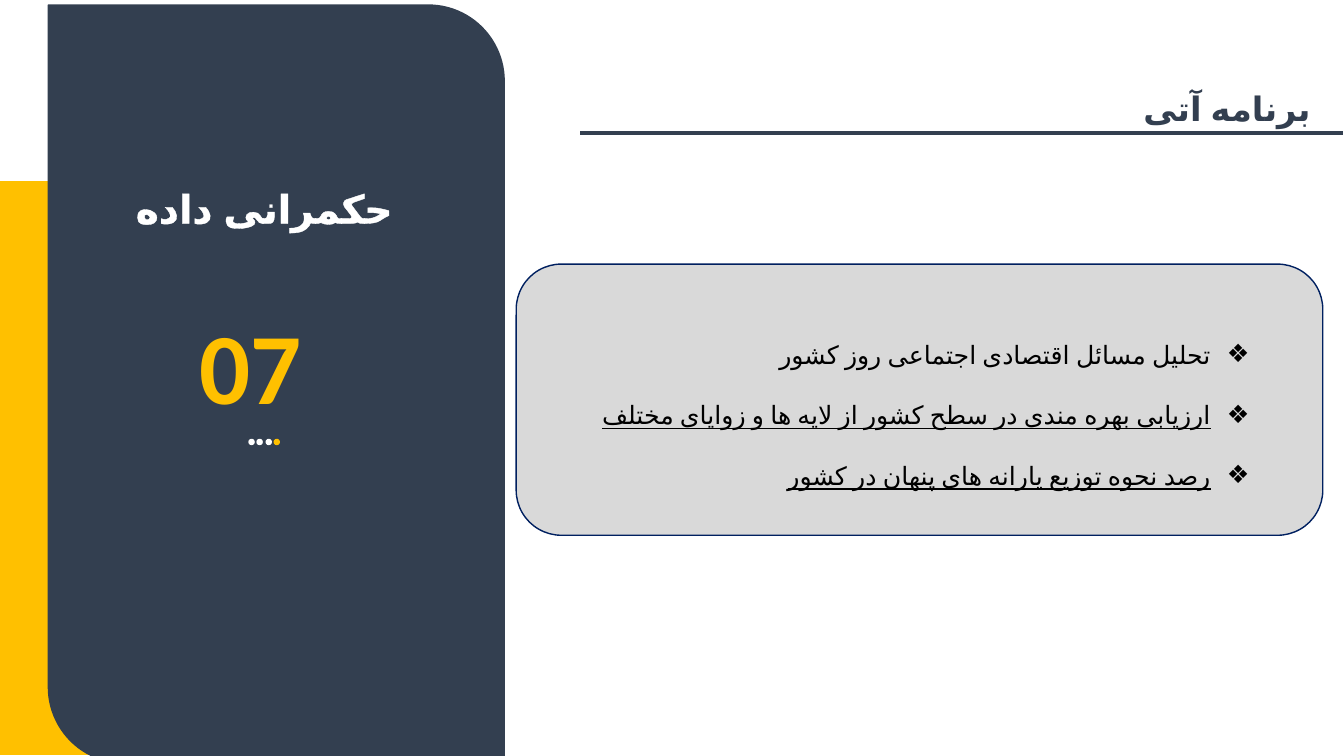
from dataclasses import dataclass

import pptx
import pptx.dml.color
import pptx.enum.shapes
import pptx.enum.text
import pptx.oxml
import pptx.oxml.ns
import pptx.shapes.autoshape
import pptx.shapes.base
import pptx.text.text
import pptx.util

EMU_PER_PX = 9144  # 100 px to the inch
Shape = pptx.enum.shapes.MSO_SHAPE
Align = pptx.enum.text.PP_ALIGN
Anchor = pptx.enum.text.MSO_ANCHOR
AutoSize = pptx.enum.text.MSO_AUTO_SIZE


@dataclass(frozen=True)
class Theme:
    font: str = "Calibri"
    navy: str = "333F50"
    amber: str = "FFC000"
    white: str = "FFFFFF"
    black: str = "000000"
    card: str = "D9D9D9"
    card_edge: str = "002060"
    title_size: int = 24
    section_size: int = 28
    number_size: int = 72
    list_size: int = 18


@dataclass(frozen=True)
class Box:
    left: int
    top: int
    width: int
    height: int


@dataclass(frozen=True)
class Block:
    kind: Shape
    box: Box
    fill: str | None = None
    line: str | None = None
    rotation: int = 0


@dataclass(frozen=True)
class Style:
    size: int
    color: str
    bold: bool = False
    outlined: bool = False


@dataclass(frozen=True)
class Plan:
    text: str
    underline: bool = False


THEME = Theme()
PANEL_BOX = Box(-102, 155, 752, 452)
CARD_BOX = Box(512, 262, 800, 269)
LIST_BOX = Box(525, 275, 774, 243)
SIDE_BAND = Block(Shape.RECTANGLE, Box(0, 180, 423, 568), THEME.amber, THEME.amber)
PANEL = Block(Shape.ROUND_2_DIAG_RECTANGLE, PANEL_BOX, THEME.navy, THEME.navy, 90)
NUMBER = Block(Shape.FLOWCHART_CONNECTOR, Box(156, 297, 185, 129))
CARD = Block(Shape.ROUNDED_RECTANGLE, CARD_BOX, THEME.card, THEME.card_edge)
DOT_COLORS = [THEME.white] * 3 + [THEME.amber]
DOTS = [
    Block(Shape.FLOWCHART_CONNECTOR, Box(247 + round(i * 25 / 3), 436, 5, 5), color, color)
    for i, color in enumerate(DOT_COLORS)
]
PLANS = [
    Plan("تحلیل مسائل اقتصادی اجتماعی روز کشور"),
    Plan("ارزیابی بهره مندی در سطح کشور از لایه ها و زوایای مختلف", True),
    Plan("رصد نحوه توزیع یارانه های پنهان در کشور", True),
]


def px(length: int) -> pptx.util.Emu:
    return pptx.util.Emu(length * EMU_PER_PX)


def rgb(color: str) -> pptx.dml.color.RGBColor:
    return pptx.dml.color.RGBColor.from_string(color)


def edges(box: Box) -> tuple[pptx.util.Emu, ...]:
    return px(box.left), px(box.top), px(box.width), px(box.height)


def place(shape: pptx.shapes.base.BaseShape, box: Box) -> None:
    shape.left, shape.top, shape.width, shape.height = edges(box)


def element(tag: str, attributes: str = "", inner: str = ""):
    namespace = pptx.oxml.ns.nsdecls("a")
    return pptx.oxml.parse_xml(f"<a:{tag} {namespace} {attributes}>{inner}</a:{tag}>")


def draw_block(shapes, block: Block) -> pptx.shapes.autoshape.Shape:
    shape = shapes.add_shape(block.kind, *edges(block.box))
    shape.shadow.inherit = False
    shape.rotation = block.rotation
    if block.fill:
        shape.fill.solid()
        shape.fill.fore_color.rgb = rgb(block.fill)
    else:
        shape.fill.background()
    if block.line:
        shape.line.color.rgb = rgb(block.line)
        shape.line.width = pptx.util.Pt(1)
    else:
        shape.line.fill.background()
    return shape


def write(paragraph: pptx.text.text._Paragraph, text: str, style: Style,
          align: Align, rtl: bool = True) -> pptx.text.text._Run:
    paragraph.alignment = align
    run = paragraph.add_run()
    run.text = text
    font = run.font
    font.name = THEME.font
    font.size = pptx.util.Pt(style.size)
    font.bold = style.bold
    font.color.rgb = rgb(style.color)
    properties = run._r.get_or_add_rPr()
    if rtl:
        paragraph._p.get_or_add_pPr().set("rtl", "1")
        properties.set("lang", "fa-IR")
    if style.outlined:
        fill = f'<a:solidFill><a:srgbClr val="{style.color}"/></a:solidFill>'
        properties.insert(0, element("ln", f'w="{pptx.util.Pt(0.75)}"', fill))
    return run


def draw_title(slide) -> None:
    title = slide.shapes.title
    place(title, Box(785, 82, 525, 50))
    frame = title.text_frame
    frame.word_wrap = True
    frame.auto_size = AutoSize.SHAPE_TO_FIT_TEXT
    frame.vertical_anchor = Anchor.TOP
    write(frame.paragraphs[0], "برنامه آتی",
          Style(THEME.title_size, THEME.navy, bold=True), Align.RIGHT)

    rule = slide.shapes.add_connector(
        pptx.enum.shapes.MSO_CONNECTOR.STRAIGHT, px(1332), px(132), px(575), px(132))
    rule.line.color.rgb = rgb(THEME.navy)
    rule.line.width = pptx.util.Pt(2.25)
    rule._element.spPr.append(element("effectLst"))


def draw_section(slide) -> None:
    draw_block(slide.shapes, PANEL)
    section = slide.shapes.add_textbox(*edges(Box(51, 178, 422, 57))).text_frame
    section.word_wrap = True
    section.auto_size = AutoSize.SHAPE_TO_FIT_TEXT
    write(section.paragraphs[0], "حکمرانی داده",
          Style(THEME.section_size, THEME.white, True, True), Align.CENTER)

    dots = slide.shapes.add_group_shape()
    for dot in DOTS:
        draw_block(dots.shapes, dot)

    number = draw_block(slide.shapes, NUMBER).text_frame
    number.vertical_anchor = Anchor.MIDDLE
    write(number.paragraphs[0], "07",
          Style(THEME.number_size, THEME.amber, True, True), Align.CENTER, rtl=False)


def draw_plans(slide) -> None:
    card = draw_block(slide.shapes, CARD)
    plans = slide.placeholders[1]
    place(plans, LIST_BOX)
    card._element.addnext(plans._element)  # the list lies in front of its card
    frame = plans.text_frame
    frame.word_wrap = True
    frame.auto_size = AutoSize.NONE
    frame.vertical_anchor = Anchor.MIDDLE
    for i, plan in enumerate(PLANS):
        paragraph = frame.add_paragraph() if i else frame.paragraphs[0]
        paragraph.level = 1
        paragraph.line_spacing = 2.0
        paragraph.space_before = pptx.util.Pt(0)
        properties = paragraph._p.get_or_add_pPr()
        properties.set("marL", str(px(88)))
        properties.set("indent", str(px(-38)))
        properties.append(element("buFont", f'typeface="{THEME.font}"'))
        properties.append(element("buChar", 'char="❖"'))
        run = write(paragraph, plan.text, Style(THEME.list_size, THEME.black), Align.RIGHT)
        run.font.underline = plan.underline


def main() -> None:
    deck = pptx.Presentation()
    deck.slide_width, deck.slide_height = px(1333), px(750)
    slide = deck.slides.add_slide(deck.slide_layouts[1])
    draw_block(slide.shapes, SIDE_BAND)
    draw_title(slide)
    draw_section(slide)
    draw_plans(slide)
    deck.save("out.pptx")


if __name__ == "__main__":
    main()
